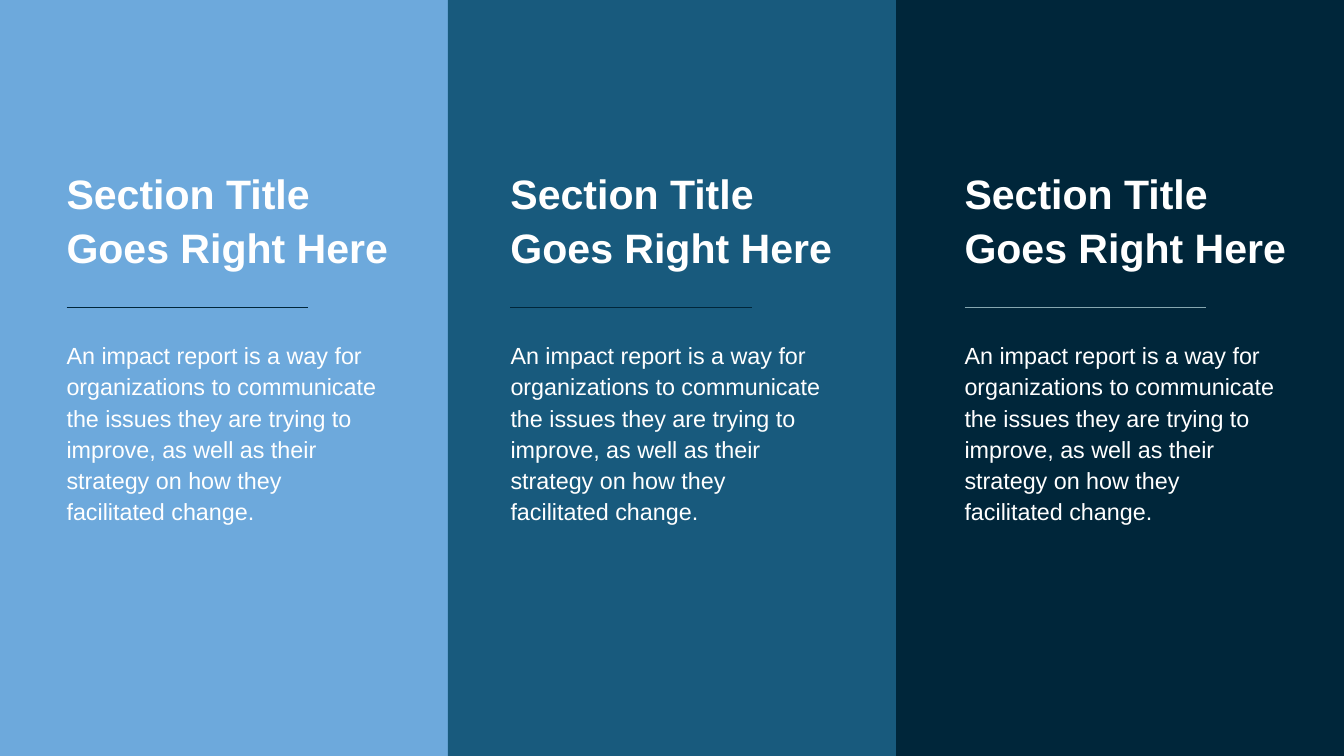
"""Build a slide with three coloured columns, each with a title, a rule and a text."""
from lxml.etree import SubElement
from pptx import Presentation
from pptx.dml.color import RGBColor
from pptx.enum.shapes import MSO_CONNECTOR, MSO_SHAPE
from pptx.oxml.ns import qn
from pptx.util import Inches, Pt

WIDTH, HEIGHT = 20, 11.25
COLUMN = WIDTH / 3
TITLE_TOP, RULE_TOP, BODY_TOP = 2.45, 4.58, 5.03
TITLE = ["Section Title", "Goes Right Here"]
BODY = ["An impact report is a way for organizations to communicate the issues they are "
        "trying to improve, as well as their strategy on how they facilitated change."]
COLUMNS = [("6DA9DC", "00263A", 0.99), ("185A7D", "00263A", 0.93), ("00263A", "86A7B0", 1.02)]


def color(code):
    return RGBColor.from_string(code)


def add_text(slide, box, lines, size, spacing, bold):
    frame = slide.shapes.add_textbox(*map(Inches, box)).text_frame
    frame.word_wrap = True
    frame.margin_left = frame.margin_top = frame.margin_right = frame.margin_bottom = 0
    frame.text = "\n".join(lines)
    for paragraph in frame.paragraphs:
        paragraph.line_spacing = Pt(spacing)
        paragraph.font.name = "Arial"
        paragraph.font.size = Pt(size)
        paragraph.font.bold = bold
        paragraph.font.color.rgb = color("FFFFFF")


presentation = Presentation()
presentation.slide_width, presentation.slide_height = Inches(WIDTH), Inches(HEIGHT)
slide = presentation.slides.add_slide(presentation.slide_layouts[6])
slide.background.fill.solid()
slide.background.fill.fore_color.rgb = color(COLUMNS[0][0])

for index, (panel_color, rule_color, inset) in enumerate(COLUMNS):
    left = index * COLUMN + inset
    if index > 0:
        panel = slide.shapes.add_shape(MSO_SHAPE.RECTANGLE, Inches(index * COLUMN), 0,
                                       Inches(COLUMN), Inches(HEIGHT))
        panel.shadow.inherit = False
        panel.fill.solid()
        panel.fill.fore_color.rgb = color(panel_color)
        panel.line.fill.background()

    add_text(slide, (left, TITLE_TOP, 4.8, 1.58), TITLE, 44, 57.2, True)
    add_text(slide, (left, BODY_TOP, 4.65, 2.82), BODY, 25, 33.5, False)

    rule = slide.shapes.add_connector(MSO_CONNECTOR.STRAIGHT, Inches(left), Inches(RULE_TOP),
                                      Inches(left + 3.59), Inches(RULE_TOP))
    rule.line.color.rgb = color(rule_color)
    rule.line.width = Pt(1.5)
    SubElement(rule._element.spPr, qn("a:effectLst"))

presentation.save("out.pptx")
